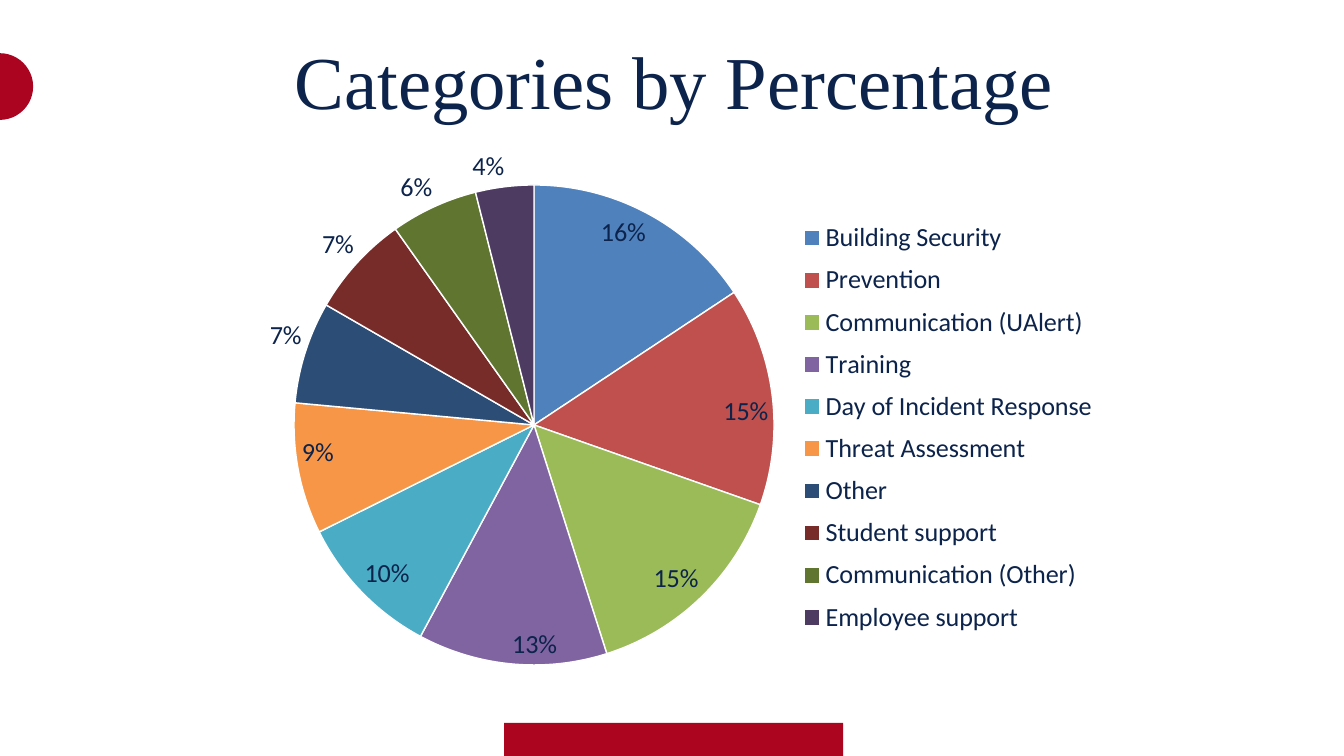
from lxml import etree
from pptx import Presentation
from pptx.chart.data import CategoryChartData
from pptx.dml.color import RGBColor
from pptx.enum.chart import XL_CHART_TYPE, XL_LABEL_POSITION, XL_LEGEND_POSITION
from pptx.enum.shapes import MSO_SHAPE
from pptx.enum.text import MSO_ANCHOR, PP_ALIGN
from pptx.oxml.ns import qn
from pptx.util import Pt

PIE = XL_CHART_TYPE.PIE
INSIDE = XL_LABEL_POSITION.INSIDE_END
OUTSIDE = XL_LABEL_POSITION.OUTSIDE_END
RIGHT = XL_LEGEND_POSITION.RIGHT
RECT, OVAL = MSO_SHAPE.RECTANGLE, MSO_SHAPE.OVAL
MIDDLE, CENTER = MSO_ANCHOR.MIDDLE, PP_ALIGN.CENTER

NAVY = RGBColor(0x0C, 0x23, 0x4B)
RED = RGBColor(0xAB, 0x05, 0x20)
CRIMSON = RGBColor(0xAB, 0x04, 0x20)
WHITE = RGBColor(0xFF, 0xFF, 0xFF)

# Category, value, slice colour
SLICES = [
    ("Building Security", 16, RGBColor(0x4F, 0x81, 0xBD)),
    ("Prevention", 15, RGBColor(0xC0, 0x50, 0x4D)),
    ("Communication (UAlert)", 15, RGBColor(0x9B, 0xBB, 0x59)),
    ("Training", 13, RGBColor(0x80, 0x64, 0xA2)),
    ("Day of Incident Response", 10, RGBColor(0x4B, 0xAC, 0xC6)),
    ("Threat Assessment", 9, RGBColor(0xF7, 0x96, 0x46)),
    ("Other", 7, RGBColor(0x2C, 0x4D, 0x75)),
    ("Student support", 7, RGBColor(0x77, 0x2C, 0x2A)),
    ("Communication (Other)", 6, RGBColor(0x5F, 0x75, 0x30)),
    ("Employee support", 4, RGBColor(0x4D, 0x3B, 0x62)),
]
SMALL = 7  # slices up to this value are labelled outside the pie


def place(parent, index, box, inner=False):
    """Give a chart part a fixed box, in fractions of the chart."""
    for old in parent.findall(qn("c:layout")):
        parent.remove(old)
    layout = etree.Element(qn("c:layout"))
    manual = etree.SubElement(layout, qn("c:manualLayout"))
    rules = [("layoutTarget", "inner")] if inner else []
    rules += [("xMode", "edge"), ("yMode", "edge")]
    rules += zip("xywh", box)
    for tag, value in rules:
        etree.SubElement(manual, qn("c:" + tag)).set("val", str(value))
    parent.insert(index, layout)


class Deck:
    head_font = "Times New Roman"
    body_font = "Calibri"

    def __init__(self, width, height):
        self.prs = Presentation()
        self.prs.slide_width, self.prs.slide_height = Pt(width), Pt(height)
        self.slide = self.prs.slides.add_slide(self.prs.slide_layouts[5])

    def style(self, font, size, name):
        font.size, font.name, font.color.rgb = Pt(size), name, NAVY

    def title(self, text, x, y, w, h):
        box = self.slide.shapes.title
        box.left, box.top, box.width, box.height = map(Pt, (x, y, w, h))
        frame = box.text_frame
        frame.text = text
        frame.word_wrap = False
        frame.vertical_anchor = MIDDLE
        para = frame.paragraphs[0]
        para.alignment = CENTER
        self.style(para.font, 80, self.head_font)

    def shape(self, kind, color, x, y, w, h):
        item = self.slide.shapes.add_shape(kind, *map(Pt, (x, y, w, h)))
        item.shadow.inherit = False
        item.fill.solid()
        item.fill.fore_color.rgb = color
        item.line.fill.background()

    def label(self, label, spot):
        """Show one slice's percentage at the given spot."""
        self.style(label.font, 28, self.body_font)
        label.position = spot

    def pie(self, slices, x, y, w, h):
        data = CategoryChartData()
        data.categories = [name for name, _, _ in slices]
        data.add_series("Series 1", [value for _, value, _ in slices])
        frame = self.slide.shapes.add_chart(PIE, *map(Pt, (x, y, w, h)), data)
        chart = frame.chart
        chart.has_title = False
        self.style(chart.font, 28, self.body_font)
        plot = chart.plots[0]
        plot.vary_by_categories = True
        place(chart.element.find(".//" + qn("c:plotArea")), 0,
              (0.06, 0.08, 0.56, 0.9), inner=True)

        # Legend
        chart.has_legend = True
        legend = chart.legend
        legend.position = RIGHT
        legend.include_in_layout = False
        self.style(legend.font, 28, self.body_font)
        place(legend.font and chart.element.find(".//" + qn("c:legend")), 1,
              (0.64, 0.13, 0.36, 0.81))

        # Slices and their labels
        series = plot.series[0]
        labels = series.data_labels
        labels.show_percentage, labels.show_value = True, False
        labels.number_format, labels.number_format_is_linked = "0%", False
        self.label(labels, INSIDE)
        for i, (_, value, color) in enumerate(slices):
            point = series.points[i]
            point.format.fill.solid()
            point.format.fill.fore_color.rgb = color
            point.format.line.color.rgb = WHITE
            point.format.line.width = Pt(1.5)
            if value <= SMALL:
                self.label(point.data_label, OUTSIDE)
        for own in chart.element.iter(qn("c:dLbl")):
            own.find(qn("c:showVal")).set("val", "0")
            own.find(qn("c:showPercent")).set("val", "1")


def main():
    deck = Deck(1440, 810)
    # Edge decoration
    deck.shape(RECT, RED, 540, 774.5, 363.5, 39)
    deck.shape(OVAL, CRIMSON, -36, 57, 71.5, 71.5)
    # Chart and title
    deck.pie(SLICES, 258, 152.5, 924, 571.5)
    deck.title("Categories by Percentage", 305, 33, 835, 104.5)
    deck.prs.save("out.pptx")


if __name__ == "__main__":
    main()
